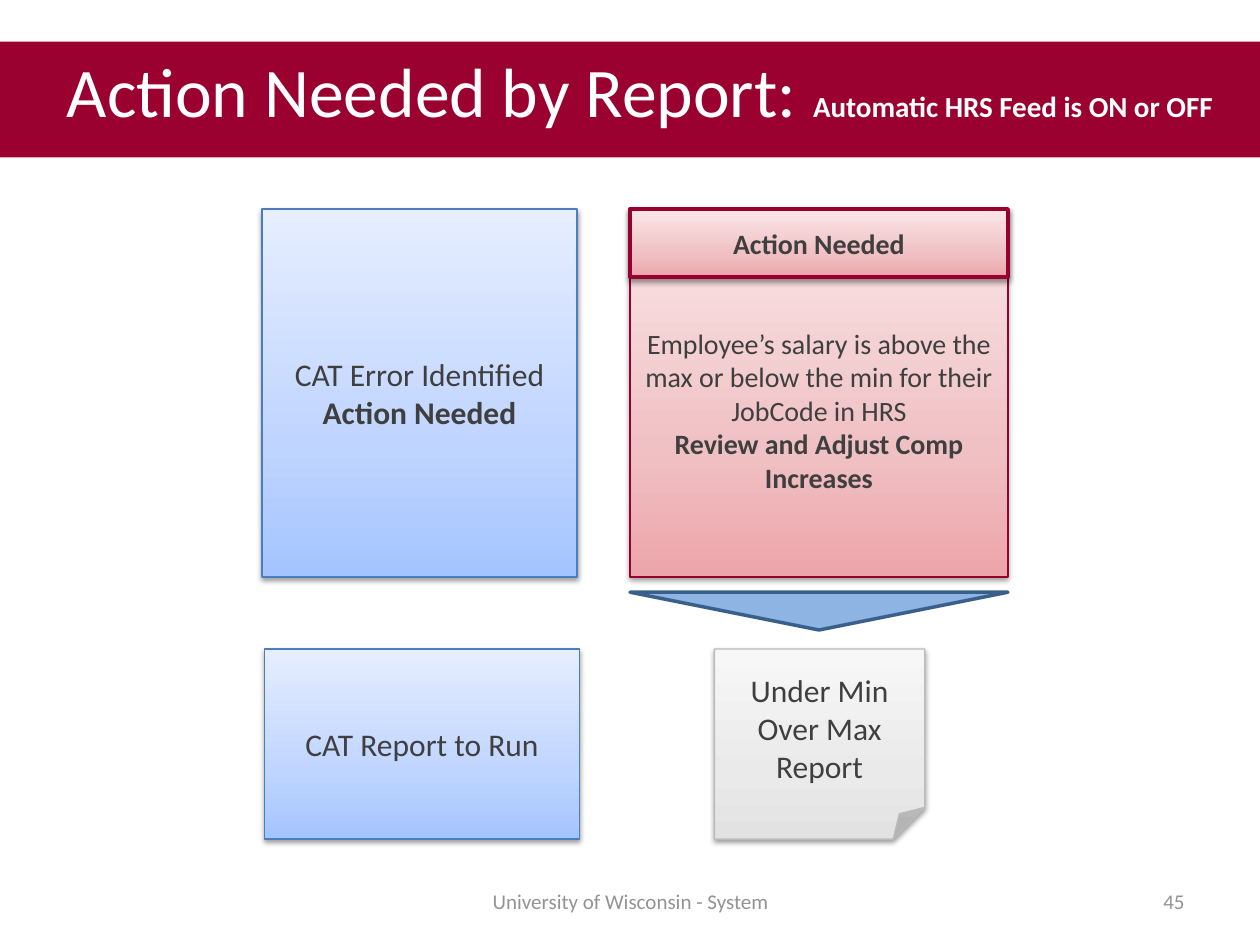
from copy import deepcopy
from dataclasses import dataclass

from lxml import etree
from pptx import Presentation
from pptx import util as u
from pptx.dml.color import RGBColor
from pptx.enum import shapes, text
from pptx.oxml import ns


@dataclass(frozen=True)
class Theme:
    font: str = "Calibri"
    band: str = "9A0030"
    white: str = "FFFFFF"
    ink: str = "3F3F3F"
    muted: str = "939393"
    blue: tuple = ("A4C4FF", "BFD4FF", "E6EEFF")
    red: tuple = ("ECA5AA", "F0C1C4", "FAE7E8")
    grey: tuple = ("E2E2E2", "EAEAEA", "F7F7F7")
    blue_line: str = "4B7EBC"
    red_line: str = "97002F"
    grey_line: str = "BBBBBB"
    arrow: str = "8EB4E3"
    arrow_line: str = "3A5F8C"
    title: float = 39.8
    subtitle: float = 16.6
    label: float = 18
    detail: float = 16
    footer: float = 12


THEME = Theme()
STOPS = (0, 0.35, 1)
LEFT, RIGHT = 2.08, 5
TOP, BOTTOM = 1.66, 5.15
TOP_HEIGHT, BOTTOM_HEIGHT = 2.92, 1.51
LABEL_WIDTH, ACTION_WIDTH = 2.5, 3


def style_font(font, size, color, bold=False):
    font.name = THEME.font
    font.size = u.Pt(size)
    font.bold = bold
    font.color.rgb = RGBColor.from_string(color)


def write_lines(frame, lines, size, color, align=text.PP_ALIGN.CENTER):
    """Fill a frame with (wording, bold) lines, centred vertically."""
    frame.word_wrap = True
    frame.vertical_anchor = text.MSO_ANCHOR.MIDDLE
    for index, (wording, bold) in enumerate(lines):
        para = frame.add_paragraph() if index else frame.paragraphs[0]
        para.text = wording
        para.alignment = align
        style_font(para.font, size, color, bold)


def fill_gradient(fill, colors):
    """Run three colours from the bottom edge to the top edge."""
    fill.gradient()
    fill.gradient_angle = 90
    stop_list = fill._xPr.find(ns.qn("a:gradFill")).find(ns.qn("a:gsLst"))
    stop_list.append(deepcopy(stop_list[-1]))
    for stop, position, color in zip(fill.gradient_stops, STOPS, colors):
        stop.position = position
        stop.color.rgb = RGBColor.from_string(color)


def add_drop_shadow(shape):
    shape.shadow.inherit = False
    effects = shape._element.spPr.find(ns.qn("a:effectLst"))
    shadow = etree.SubElement(
        effects, ns.qn("a:outerShdw"), blurRad=str(u.Pt(3.1)),
        dist=str(u.Pt(1.6)), dir="5400000", rotWithShape="0")
    color = etree.SubElement(shadow, ns.qn("a:srgbClr"), val="000000")
    etree.SubElement(color, ns.qn("a:alpha"), val="38000")


def add_outlined(page, kind, place, line, weight):
    shape = page.shapes.add_shape(kind, *map(u.Inches, place))
    shape.line.color.rgb = RGBColor.from_string(line)
    shape.line.width = u.Pt(weight)
    return shape


def add_card(page, place, colors, line, lines, size=THEME.label, weight=0.75,
             kind=shapes.MSO_SHAPE.RECTANGLE):
    card = add_outlined(page, kind, place, line, weight)
    fill_gradient(card.fill, colors)
    add_drop_shadow(card)
    write_lines(card.text_frame, lines, size, THEME.ink)
    return card


def add_down_arrow(page, place):
    arrow = add_outlined(page, shapes.MSO_SHAPE.ISOSCELES_TRIANGLE, place,
                         THEME.arrow_line, 2)
    arrow.rotation = 180
    arrow.fill.solid()
    arrow.fill.fore_color.rgb = RGBColor.from_string(THEME.arrow)
    arrow.shadow.inherit = False


def add_title_band(page, heading, subtitle):
    band = page.shapes.title
    band.left, band.top, band.width, band.height = map(
        u.Inches, (0, 0.33, 10, 0.92))
    band.fill.solid()
    band.fill.fore_color.rgb = RGBColor.from_string(THEME.band)
    frame = band.text_frame
    frame.auto_size = text.MSO_AUTO_SIZE.NONE
    frame.word_wrap = True
    frame.vertical_anchor = text.MSO_ANCHOR.TOP
    frame.margin_left = u.Inches(0.53)
    para = frame.paragraphs[0]
    para.alignment = text.PP_ALIGN.LEFT
    for wording, size, bold in ((heading, THEME.title, False),
                                (subtitle, THEME.subtitle, True)):
        span = para.add_run()
        span.text = wording
        style_font(span.font, size, THEME.white, bold)


def add_footer(page, left, width, wording, align):
    box = page.shapes.add_textbox(*map(u.Inches, (left, 6.95, width, 0.4)))
    write_lines(box.text_frame, [(wording, False)], THEME.footer,
                THEME.muted, align)


def main():
    deck = Presentation()
    deck.slide_width, deck.slide_height = u.Inches(10), u.Inches(7.5)
    page = deck.slides.add_slide(deck.slide_layouts.get_by_name("Title Only"))

    add_title_band(page, "Action Needed by Report: ",
                   "Automatic HRS Feed is ON or OFF")
    add_card(page, (LEFT, TOP, LABEL_WIDTH, TOP_HEIGHT), THEME.blue,
             THEME.blue_line,
             [("CAT Error Identified", False), ("Action Needed", True)])
    add_card(page, (LEFT + 0.02, BOTTOM, LABEL_WIDTH, BOTTOM_HEIGHT),
             THEME.blue, THEME.blue_line, [("CAT Report to Run", False)])

    action = add_card(
        page, (RIGHT, TOP, ACTION_WIDTH, TOP_HEIGHT), THEME.red,
        THEME.red_line,
        [("Employee’s salary is above the max or below the min for their "
          "JobCode in HRS", False),
         ("Review and Adjust Comp Increases", True)], THEME.detail)
    action.text_frame.margin_top = u.Inches(0.32)
    add_card(page, (RIGHT, TOP, ACTION_WIDTH, 0.54), THEME.red,
             THEME.red_line, [("Action Needed", True)], THEME.detail, 2.25)

    add_down_arrow(page, (RIGHT, 4.7, ACTION_WIDTH, 0.3))
    add_card(page, (5.67, BOTTOM, 1.67, BOTTOM_HEIGHT), THEME.grey,
             THEME.grey_line, [("Under Min Over Max Report", False)],
             kind=shapes.MSO_SHAPE.FOLDED_CORNER)

    add_footer(page, 3.42, 3.17, "University of Wisconsin - System",
               text.PP_ALIGN.CENTER)
    add_footer(page, 7.17, 2.33, "45", text.PP_ALIGN.RIGHT)
    deck.save("out.pptx")


if __name__ == "__main__":
    main()
